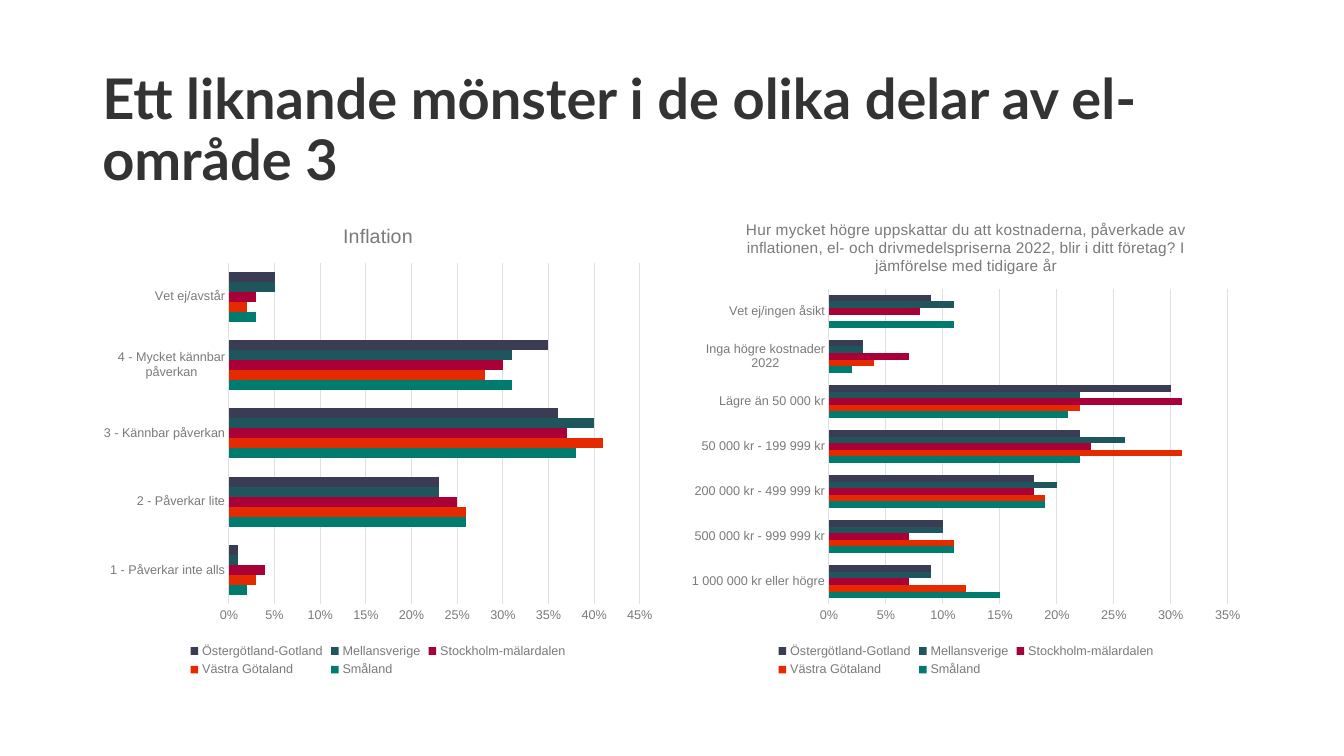
"""Build a slide comparing inflation survey answers across regions in two bar charts."""
from dataclasses import dataclass

from pptx import Presentation
from pptx.chart.data import CategoryChartData
from pptx.dml.color import RGBColor
from pptx.enum.chart import XL_CHART_TYPE, XL_LEGEND_POSITION, XL_TICK_MARK
from pptx.enum.text import MSO_ANCHOR
from pptx.slide import Slide
from pptx.text.text import Font
from pptx.util import Pt

INK = RGBColor(0x33, 0x33, 0x33)
GREY = RGBColor(0x7A, 0x7A, 0x7A)
GRID = RGBColor(0xE0, 0xE0, 0xE0)
REGION_COLORS = {
    "Småland": RGBColor(0x00, 0x7C, 0x6E),
    "Västra Götaland": RGBColor(0xE5, 0x2A, 0x00),
    "Stockholm-mälardalen": RGBColor(0xAA, 0x00, 0x38),
    "Mellansverige": RGBColor(0x1F, 0x55, 0x5C),
    "Östergötland-Gotland": RGBColor(0x3A, 0x3C, 0x54),
}


@dataclass(frozen=True)
class RegionChart:
    title: str
    title_size: float
    left: float
    top: float
    height: float
    axis_maximum: float
    categories: tuple[str, ...]
    region_values: tuple[tuple[float, ...], ...]


CHART_WIDTH = 408.25
CHARTS = (
    RegionChart(
        "Inflation", 14, 66, 146, 340.5, 0.45,
        ("1 - Påverkar inte alls", "2 - Påverkar lite", "3 - Kännbar påverkan",
         "4 - Mycket kännbar påverkan", "Vet ej/avstår"),
        ((0.02, 0.26, 0.38, 0.31, 0.03),
         (0.03, 0.26, 0.41, 0.28, 0.02),
         (0.04, 0.25, 0.37, 0.30, 0.03),
         (0.01, 0.23, 0.40, 0.31, 0.05),
         (0.01, 0.23, 0.36, 0.35, 0.05)),
    ),
    RegionChart(
        "Hur mycket högre uppskattar du att kostnaderna, påverkade av inflationen, "
        "el- och drivmedelspriserna 2022, blir i ditt företag? "
        "I jämförelse med tidigare år",
        11, 486, 144, 342.5, 0.35,
        ("1 000 000 kr eller högre", "500 000 kr - 999 999 kr",
         "200 000 kr - 499 999 kr", "50 000 kr - 199 999 kr",
         "Lägre än 50 000 kr", "Inga högre kostnader 2022", "Vet ej/ingen åsikt"),
        ((0.15, 0.11, 0.19, 0.22, 0.21, 0.02, 0.11),
         (0.12, 0.11, 0.19, 0.31, 0.22, 0.04, 0),
         (0.07, 0.07, 0.18, 0.23, 0.31, 0.07, 0.08),
         (0.09, 0.10, 0.20, 0.26, 0.22, 0.03, 0.11),
         (0.09, 0.10, 0.18, 0.22, 0.30, 0.03, 0.09)),
    ),
)


def style_font(font: Font, name: str, size: float, color: RGBColor, bold: bool = False) -> None:
    font.name = name
    font.size = Pt(size)
    font.bold = bold
    font.color.rgb = color


def add_heading(slide: Slide, text: str) -> None:
    shape = slide.shapes.add_textbox(Pt(66), Pt(41.75), Pt(828), Pt(104.5))
    frame = shape.text_frame
    frame.word_wrap = True
    frame.vertical_anchor = MSO_ANCHOR.MIDDLE
    paragraph = frame.paragraphs[0]
    paragraph.line_spacing = 0.9
    run = paragraph.add_run()
    run.text = text
    style_font(run.font, "Lato", 40, INK, True)


def add_region_chart(slide: Slide, region_chart: RegionChart) -> None:
    data = CategoryChartData(number_format="###0%")
    data.categories = region_chart.categories
    for region, values in zip(REGION_COLORS, region_chart.region_values):
        data.add_series(region, values)
    chart = slide.shapes.add_chart(
        XL_CHART_TYPE.BAR_CLUSTERED, Pt(region_chart.left), Pt(region_chart.top),
        Pt(CHART_WIDTH), Pt(region_chart.height), data,
    ).chart
    style_font(chart.font, "Arial", 10, INK)

    chart.has_title = True
    run = chart.chart_title.text_frame.paragraphs[0].add_run()
    run.text = region_chart.title
    style_font(run.font, "Arial", region_chart.title_size, GREY)
    chart.chart_title.include_in_layout = False

    chart.has_legend = True
    chart.legend.position = XL_LEGEND_POSITION.BOTTOM
    chart.legend.include_in_layout = False
    style_font(chart.legend.font, "Arial", 9, GREY)

    for axis in (chart.category_axis, chart.value_axis):
        axis.major_tick_mark = XL_TICK_MARK.NONE
        axis.minor_tick_mark = XL_TICK_MARK.NONE
        style_font(axis.tick_labels.font, "Arial", 9, GREY)
    value_axis = chart.value_axis
    value_axis.minimum_scale = 0
    value_axis.maximum_scale = region_chart.axis_maximum
    value_axis.major_unit = 0.05
    value_axis.tick_labels.number_format = "###0%"
    value_axis.tick_labels.number_format_is_linked = False
    value_axis.format.line.fill.background()
    value_axis.has_major_gridlines = True
    for line in (chart.category_axis.format.line, value_axis.major_gridlines.format.line):
        line.color.rgb = GRID
        line.width = Pt(0.75)

    plot = chart.plots[0]
    plot.gap_width = 182
    plot.vary_by_categories = False
    for series, color in zip(plot.series, REGION_COLORS.values()):
        series.invert_if_negative = False
        series.format.fill.solid()
        series.format.fill.fore_color.rgb = color


def main() -> None:
    presentation = Presentation()
    presentation.slide_width = Pt(960)
    presentation.slide_height = Pt(540)
    slide = presentation.slides.add_slide(presentation.slide_layouts[6])
    add_heading(slide, "Ett liknande mönster i de olika delar av el-område 3")
    for region_chart in CHARTS:
        add_region_chart(slide, region_chart)
    presentation.save("out.pptx")


if __name__ == "__main__":
    main()
